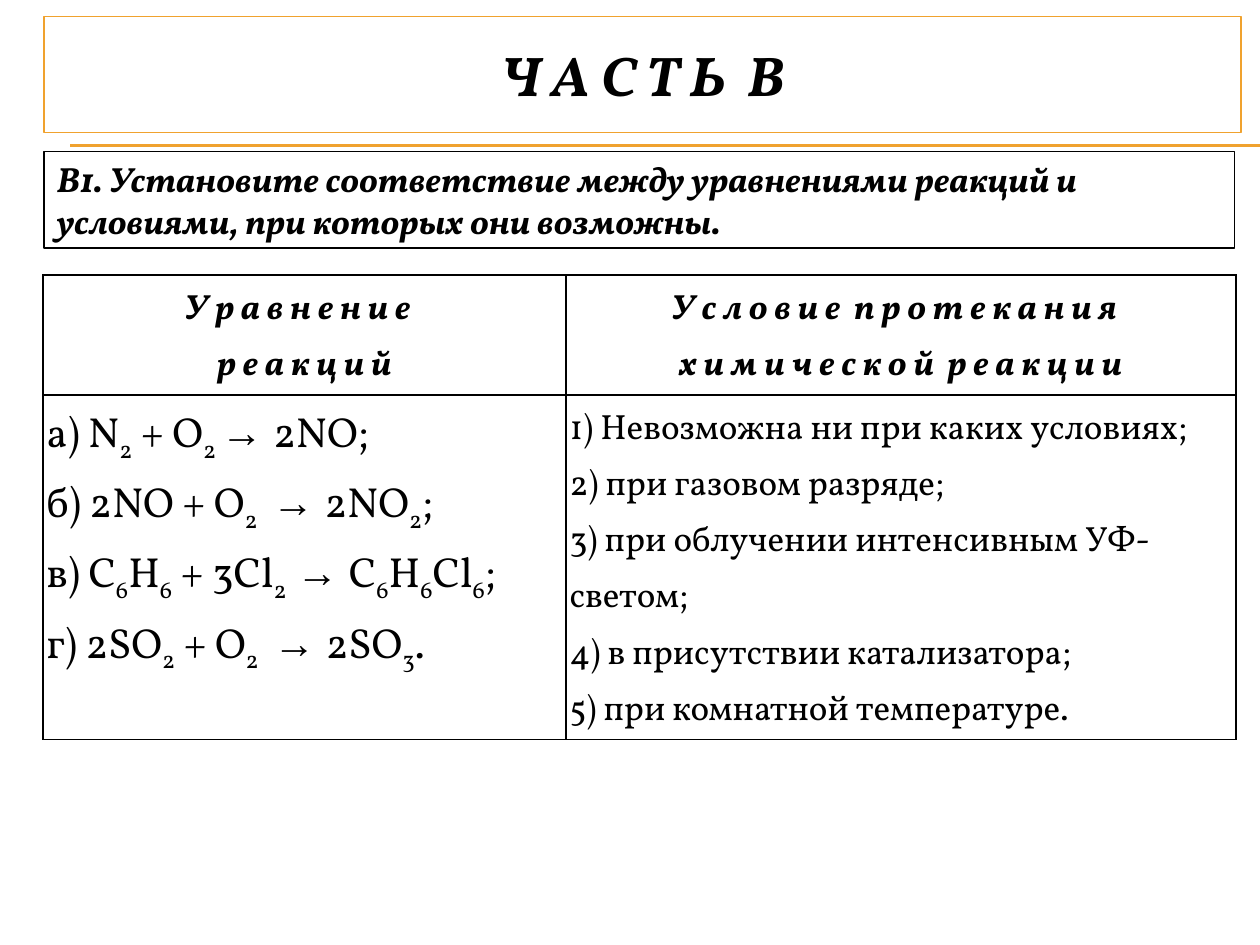
from dataclasses import dataclass
from typing import NamedTuple

from lxml.etree import SubElement as Sub
from pptx import Presentation
from pptx.dml.color import RGBColor as Rgb
from pptx.enum.shapes import MSO_CONNECTOR as Link, MSO_SHAPE as Form
from pptx.enum.text import MSO_ANCHOR as Anchor, MSO_AUTO_SIZE as Fit, PP_ALIGN as Align
from pptx.oxml.ns import qn
from pptx.util import Pt


@dataclass(frozen=True)
class Theme:
    ink: Rgb = Rgb(0, 0, 0)
    paper: Rgb = Rgb(255, 255, 255)
    gold: Rgb = Rgb(0xF0, 0xA2, 0x2E)
    font: str = "Vollkorn"
    arrow: str = "Times New Roman"
    title: int = 32
    text: int = 20
    sums: int = 24
    thin: float = 0.75
    edge: int = 1


class Box(NamedTuple):
    left: float
    top: float
    width: float
    height: float

    def pts(self) -> list:
        return [Pt(side) for side in self]


class Entry(NamedTuple):
    lines: list[str]
    size: int
    head: bool = False


THEME = Theme()
TITLE = Box(25.2, 9.4, 684, 66.2)
TASK = Box(25.2, 86.4, 680.4, 55.4)
GRID = Box(24.5, 157, 681.8, 229.7)
COLS = [298.8, 383]
ROWS = [44.6, 125.3]
INSET = 2.16
RULES = [82.8, 83.5]

# Braces mark subscripts; gaps beside them are no-break spaces.
TABLE = [
    [
        Entry(["У р а в н е н и е  ", "р е а к ц и й"], THEME.text, True),
        Entry(["У с л о в и е  п р о т е к а н и я  ",
               "х и м и ч е с к о й  р е а к ц и и"], THEME.text, True),
    ],
    [
        Entry(["а) N{2} + O{2 }→ 2NO;",
               "б) 2NO + O{2   }→ 2NO{2};",
               "в) C{6}H{6} + 3Cl{2  }→ C{6}H{6}Cl{6};",
               "г) 2SO{2} + O{2   }→ 2SO{3}."], THEME.sums),
        Entry(["1) Невозможна ни при каких условиях;",
               "2) при газовом разряде;",
               "3) при облучении интенсивным УФ-светом;",
               "4) в присутствии катализатора;",
               "5) при комнатной температуре."], THEME.text),
    ],
]


def add_run(para, text: str, size: int, bold: bool, font: str = THEME.font,
            low: bool = False) -> None:
    run = para.add_run()
    run.text = text
    face = run.font
    face.name, face.size = font, Pt(size)
    face.bold = face.italic = bold
    face.color.rgb = THEME.ink
    if low:
        run._r.get_or_add_rPr().set("baseline", "-25000")


def add_line(para, line: str, size: int, bold: bool) -> None:
    """Add one line, with subscripts in braces and arrows in their own font."""
    for spot, part in enumerate(line.replace("}", "{").split("{")):
        if spot % 2:
            add_run(para, part, size, bold, low=True)
            continue
        start, arrow, rest = part.partition("→ ")
        for text, font in ((start, THEME.font), (arrow, THEME.arrow), (rest, THEME.font)):
            if text:
                add_run(para, text, size, bold, font)


def paint(shape, line: Rgb) -> None:
    shape.fill.solid()
    shape.fill.fore_color.rgb = THEME.paper
    shape.line.color.rgb = line
    shape.line.width = Pt(THEME.thin)
    shape.shadow.inherit = False


def add_title(slide) -> None:
    shape = slide.shapes.title
    shape.left, shape.top, shape.width, shape.height = TITLE.pts()
    paint(shape, THEME.gold)
    frame = shape.text_frame
    frame.auto_size, frame.vertical_anchor = Fit.NONE, Anchor.MIDDLE
    para = frame.paragraphs[0]
    para.alignment = Align.CENTER
    add_run(para, "Ч А С Т Ь  B", THEME.title, True)


def add_rule(slide, top: float) -> None:
    rule = slide.shapes.add_connector(Link.STRAIGHT, Pt(40.3), Pt(top), Pt(720), Pt(top))
    rule.line.color.rgb = THEME.gold
    rule.line.width = Pt(THEME.thin)
    Sub(rule._element.spPr, qn("a:effectLst"))


def add_task(slide) -> None:
    shape = slide.shapes.add_shape(Form.RECTANGLE, *TASK.pts())
    paint(shape, THEME.ink)
    frame = shape.text_frame
    frame.word_wrap = True
    frame.auto_size, frame.vertical_anchor = Fit.SHAPE_TO_FIT_TEXT, Anchor.MIDDLE
    para = frame.paragraphs[0]
    para.alignment = Align.LEFT
    add_run(para, "В1. Установите соответствие между уравнениями реакций "
                  "и условиями, при которых они возможны.", THEME.text, True)


def add_edges(cell) -> None:
    props = cell._tc.get_or_add_tcPr()
    for side in "LRTB":
        edge = Sub(props, qn(f"a:ln{side}"), w=str(Pt(THEME.edge)))
        Sub(Sub(edge, qn("a:solidFill")), qn("a:srgbClr"), val=str(THEME.ink))


def fill_cell(cell, entry: Entry) -> None:
    add_edges(cell)
    cell.fill.solid()
    cell.fill.fore_color.rgb = THEME.paper
    cell.margin_left = cell.margin_right = Pt(INSET)
    cell.margin_top = cell.margin_bottom = Pt(INSET)
    para = cell.text_frame.paragraphs[0]
    para.alignment = Align.CENTER if entry.head else Align.LEFT
    para.line_spacing = 1.15
    for rank, line in enumerate(entry.lines):
        if rank:
            para.add_line_break()
        add_line(para, line, entry.size, entry.head)


def add_grid(slide) -> None:
    frame = slide.shapes.add_table(len(ROWS), len(COLS), *GRID.pts())
    table = frame.table
    for col, width in zip(table.columns, COLS):
        col.width = Pt(width)
    for row, height, entries in zip(table.rows, ROWS, TABLE):
        row.height = Pt(height)
        for cell, entry in zip(row.cells, entries):
            fill_cell(cell, entry)
    frame.height = Pt(GRID.height)


def main() -> None:
    deck = Presentation()
    deck.slide_width, deck.slide_height = Pt(720), Pt(540)
    slide = deck.slides.add_slide(deck.slide_layouts[5])
    for top in RULES:
        add_rule(slide, top)
    add_title(slide)
    add_grid(slide)
    add_task(slide)
    deck.save("out.pptx")


if __name__ == "__main__":
    main()
